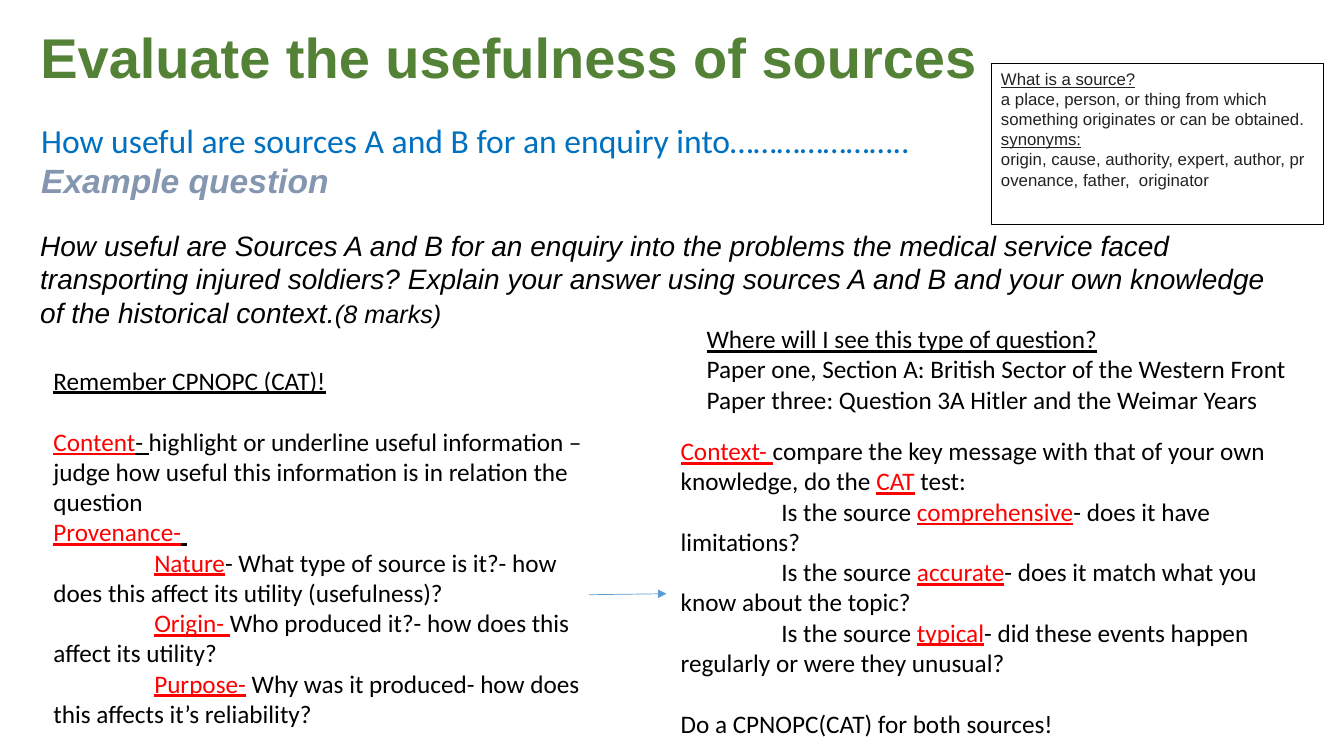
from dataclasses import dataclass

from lxml.etree import SubElement
from pptx import Presentation
from pptx.dml.color import RGBColor
from pptx.enum.shapes import MSO_CONNECTOR, MSO_SHAPE
from pptx.enum.text import MSO_ANCHOR, MSO_AUTO_SIZE, PP_ALIGN
from pptx.oxml.ns import qn
from pptx.util import Inches, Pt


@dataclass(frozen=True)
class Theme:
    heading_font: str = "Arial"
    body_font: str = "Calibri"
    green: RGBColor = RGBColor.from_string("538135")
    blue: RGBColor = RGBColor.from_string("0070C0")
    slate: RGBColor = RGBColor.from_string("8496B0")
    arrow: RGBColor = RGBColor.from_string("5B9BD5")
    red: RGBColor = RGBColor.from_string("FF0000")
    black: RGBColor = RGBColor.from_string("000000")
    charcoal: RGBColor = RGBColor.from_string("222222")
    white: RGBColor = RGBColor.from_string("FFFFFF")
    title_size: Pt = Pt(40)
    subtitle_size: Pt = Pt(24)
    question_size: Pt = Pt(20)
    body_size: Pt = Pt(18)
    note_size: Pt = Pt(12)


theme = Theme()
KEY, UNDERLINED, PLAIN = "key", "underlined", "plain"


def place(shape, left, top, width, height, anchor=MSO_ANCHOR.TOP, wrap=True):
    """Position a shape and return its prepared text frame."""
    shape.left, shape.top = Inches(left), Inches(top)
    shape.width, shape.height = Inches(width), Inches(height)
    frame = shape.text_frame
    frame.auto_size = MSO_AUTO_SIZE.NONE
    frame.word_wrap = wrap
    frame.vertical_anchor = anchor
    return frame


def write(frame, lines, font, size, color):
    """Write lines of (indent, space before, runs); a run is (text, style)."""
    for index, (indent, space_before, runs) in enumerate(lines):
        paragraph = frame.paragraphs[0] if index == 0 else frame.add_paragraph()
        properties = paragraph._p.get_or_add_pPr()
        properties.set("marL", "0")
        properties.set("indent", str(Inches(indent)))
        SubElement(properties, qn("a:buNone"))
        paragraph.alignment = PP_ALIGN.LEFT
        paragraph.space_before = Pt(space_before)
        paragraph.font.name = font
        paragraph.font.size = size
        paragraph.font.color.rgb = color
        for text, style in runs:
            run = paragraph.add_run()
            run.text = text
            if style != PLAIN:
                run.font.underline = True
            if style == KEY:
                run.font.color.rgb = theme.red


presentation = Presentation()
presentation.slide_width = Inches(13.33)
presentation.slide_height = Inches(7.5)
slide = presentation.slides.add_slide(presentation.slide_layouts[3])
title, left_body, right_body = slide.placeholders

# Title
frame = place(title, 0.3, 0.17, 9.88, 0.77)
write(frame, [(0, 0, [("Evaluate the usefulness of sources", PLAIN)])],
      theme.heading_font, theme.title_size, theme.green)
frame.paragraphs[0].font.bold = True

# Question stem
frame = place(slide.shapes.add_textbox(0, 0, 0, 0), 0.31, 1.13, 8.9, 0.91,
              MSO_ANCHOR.MIDDLE, wrap=False)
write(frame, [
    (0, 0, [("How useful are sources A and B for an enquiry into…………………..", PLAIN)]),
    (0, 0, [("Example question", PLAIN)]),
], theme.body_font, theme.subtitle_size, theme.blue)
example_font = frame.paragraphs[1].font
example_font.name = theme.heading_font
example_font.color.rgb = theme.slate
example_font.bold = example_font.italic = True

# Definition box, its synonyms joined by non-breaking spaces
synonyms = chr(160).join(["origin,", "cause,", "authority,", "expert,", "author,",
                          "provenance,", "father, ", "originator"])
definition = slide.shapes.add_shape(MSO_SHAPE.RECTANGLE, 0, 0, 0, 0)
definition.shadow.inherit = False
definition.fill.solid()
definition.fill.fore_color.rgb = theme.white
definition.line.color.rgb = theme.black
definition.line.width = Pt(0.75)
frame = place(definition, 9.83, 0.63, 3.3, 1.6)
write(frame, [
    (0, 0, [("What is a source?", UNDERLINED)]),
    (0, 0, [("a place, person, or thing from which something originates "
             "or can be obtained.", PLAIN)]),
    (0, 0, [("synonyms:", UNDERLINED)]),
    (0, 0, [(synonyms, PLAIN)]),
], theme.heading_font, theme.note_size, theme.charcoal)

# Example question
frame = place(slide.shapes.add_textbox(0, 0, 0, 0), 0.3, 2.21, 12.62, 1.11,
              MSO_ANCHOR.MIDDLE)
write(frame, [(0, 0, [
    ("How useful are Sources A and B for an enquiry into the problems the medical "
     "service faced transporting injured soldiers? Explain your answer using sources "
     "A and B and your own knowledge of the historical context.", PLAIN),
    ("(8 marks)", PLAIN),
])], theme.heading_font, theme.question_size, theme.black)
frame.paragraphs[0].font.italic = True
frame.paragraphs[0].runs[1].font.size = theme.body_size

# Where the question appears
frame = place(slide.shapes.add_textbox(0, 0, 0, 0), 6.91, 3.16, 6.02, 1.01, wrap=False)
write(frame, [
    (0, 0, [("Where will I see this type of question?", UNDERLINED)]),
    (0, 0, [("Paper one, Section A: British Sector of the Western Front", PLAIN)]),
    (0, 0, [("Paper three: Question 3A Hitler and the Weimar Years", PLAIN)]),
], theme.body_font, theme.body_size, theme.black)

# Content and provenance checklist
frame = place(left_body, 0.43, 3.57, 5.73, 3.74)
write(frame, [
    (0, 0, [("Remember CPNOPC (CAT)!", UNDERLINED)]),
    (0, 22, [("Content", KEY), ("- ", UNDERLINED),
             ("highlight or underline useful information –judge how useful this "
              "information is in relation the question", PLAIN)]),
    (0, 0, [("Provenance-", KEY), (" ", UNDERLINED)]),
    (1, 0, [("Nature", KEY),
            ("- What type of source is it?- how does this affect its utility "
             "(usefulness)?", PLAIN)]),
    (1, 0, [("Origin- ", KEY),
            ("Who produced it?- how does this affect its utility?", PLAIN)]),
    (1, 0, [("Purpose-", KEY),
            (" Why was it produced- how does this affects it’s reliability?", PLAIN)]),
], theme.body_font, theme.body_size, theme.black)

# Context checklist
cat_tests = [
    ("comprehensive", "- does it have limitations?"),
    ("accurate", "- does it match what you know about the topic?"),
    ("typical", "- did these events happen regularly or were they unusual?"),
]
frame = place(right_body, 6.65, 4.27, 6.35, 3.43)
write(frame, [
    (0, 0, [("Context- ", KEY),
            ("compare the key message with that of your own knowledge, do the ", PLAIN),
            ("CAT", KEY), (" test:", PLAIN)]),
    *[(1, 0, [("Is the source ", PLAIN), (term, KEY), (check, PLAIN)])
      for term, check in cat_tests],
    (0, 22, [("Do a CPNOPC(CAT) for both sources!", PLAIN)]),
], theme.body_font, theme.body_size, theme.black)

# Arrow between the checklists
arrow = slide.shapes.add_connector(MSO_CONNECTOR.STRAIGHT, Inches(5.84), Inches(5.9),
                                   Inches(6.61), Inches(5.89))
arrow.line.color.rgb = theme.arrow
arrow.line.width = Pt(0.5)
SubElement(arrow.line._get_or_add_ln(), qn("a:tailEnd"), type="triangle")
SubElement(arrow._element.spPr, qn("a:effectLst"))

presentation.save("out.pptx")
